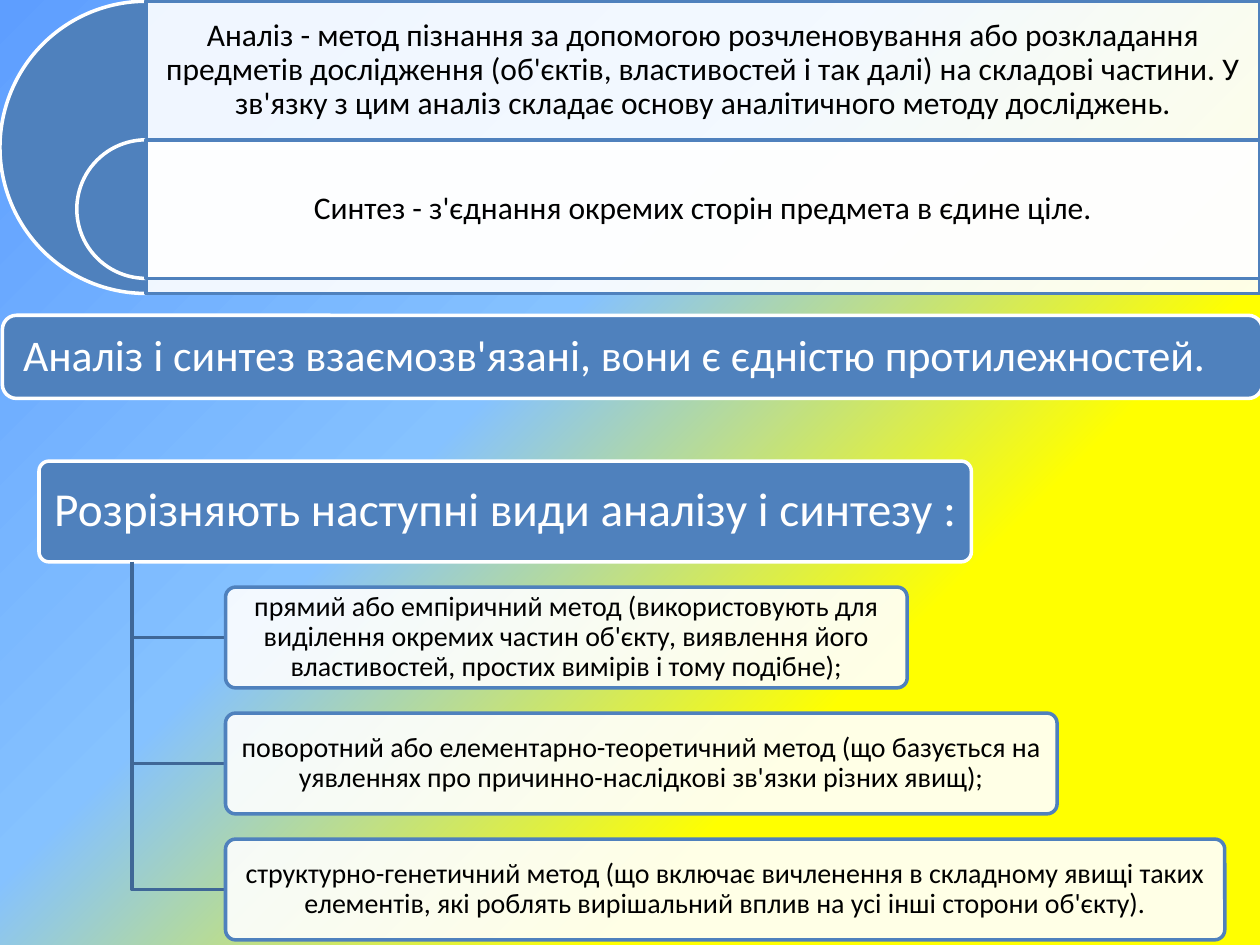
import pptx
import pptx.util
import pptx.dml.color
import pptx.enum.shapes
import pptx.enum.text
import pptx.oxml
import pptx.oxml.ns

Pt = pptx.util.Pt
SHAPE = pptx.enum.shapes.MSO_SHAPE
ALIGN = pptx.enum.text.PP_ALIGN
COLORS = {
    "blue": "4F81BD", "dark_blue": "3F6797", "white": "FFFFFF", "black": "000000",
    "sky": "5E9EFF", "light_sky": "85C2FF", "yellow": "FFFF00",
}


class SlideBuilder:
    """Holds the style and the current slide; all lengths are in points."""
    font = "Calibri"
    line_width = 2

    def __init__(self, slide):
        self.slide = slide

    def color(self, name):
        return pptx.dml.color.RGBColor.from_string(COLORS[name])

    def background(self, stops, angle):
        fill = self.slide.background.fill
        fill.gradient()
        fill.gradient_angle = 360 - angle
        stop_list = self.slide.element.find(".//" + pptx.oxml.ns.qn("a:gsLst"))
        for old_stop in list(stop_list):
            stop_list.remove(old_stop)
        for percent, name in stops:
            stop_list.append(pptx.oxml.parse_xml(
                f'<a:gs {pptx.oxml.ns.nsdecls("a")} pos="{percent * 1000}">'
                f'<a:srgbClr val="{COLORS[name]}"/></a:gs>'))

    def outline(self, shape, name):
        shape.shadow.inherit = False
        shape.line.color.rgb = self.color(name)
        shape.line.width = Pt(self.line_width)

    def shape(self, kind, box, fill, line, adjustments=(), opacity=100):
        shape = self.slide.shapes.add_shape(kind, *map(Pt, box))
        for index, value in enumerate(adjustments):
            shape.adjustments[index] = value
        shape.fill.solid()
        shape.fill.fore_color.rgb = self.color(fill)
        if opacity < 100:
            color = shape.element.spPr.find(".//" + pptx.oxml.ns.qn("a:srgbClr"))
            color.append(pptx.oxml.parse_xml(
                f'<a:alpha {pptx.oxml.ns.nsdecls("a")} val="{opacity * 1000}"/>'))
        self.outline(shape, line)
        return shape

    def half_disc(self, left, top, size):
        return self.shape(SHAPE.PIE, (left, top, size, size), "blue", "white", (54, 162))

    def blue_bar(self, box, corner):
        return self.shape(SHAPE.ROUNDED_RECTANGLE, box, "blue", "white", (corner,))

    def white_panel(self, kind, box, adjustments=()):
        return self.shape(kind, box, "white", "blue", adjustments, opacity=90)

    def text(self, shape, text, size, color, margins, align=ALIGN.CENTER):
        frame = shape.text_frame
        frame.word_wrap = True
        frame.auto_size = pptx.enum.text.MSO_AUTO_SIZE.NONE
        frame.vertical_anchor = pptx.enum.text.MSO_ANCHOR.MIDDLE
        (frame.margin_left, frame.margin_top,
         frame.margin_right, frame.margin_bottom) = map(Pt, margins)
        frame.text = text
        paragraph = frame.paragraphs[0]
        paragraph.alignment = align
        paragraph.line_spacing = 0.9
        paragraph.font.name = self.font
        paragraph.font.size = Pt(size)
        paragraph.font.color.rgb = self.color(color)

    def title(self, box, text, size, color, margins):
        title = self.slide.shapes.title
        title.left, title.top, title.width, title.height = map(Pt, box)
        self.text(title, text, size, color, margins)
        title.element.getparent().append(title.element)

    def elbow(self, x, y, end_x, end_y):
        builder = self.slide.shapes.build_freeform(Pt(x), Pt(y))
        builder.add_line_segments([(Pt(x), Pt(end_y)), (Pt(end_x), Pt(end_y))], close=False)
        elbow = builder.convert_to_shape()
        elbow.fill.background()
        self.outline(elbow, "dark_blue")


presentation = pptx.Presentation()
presentation.slide_width, presentation.slide_height = Pt(720), Pt(540)
page = SlideBuilder(presentation.slides.add_slide(presentation.slide_layouts[5]))
page.background([(0, "sky"), (40, "light_sky"), (70, "yellow"), (100, "yellow")], 45)

# Definitions: nested half discs with a panel beside each
center, top, inset = 83.5, 0.7, 5
definitions = [
    (167, "Аналіз - метод пізнання за допомогою розчленовування або розкладання предметів "
          "дослідження (об'єктів, властивостей і так далі) на складові частини. У зв'язку "
          "з цим аналіз складає основу аналітичного методу досліджень."),
    (79.2, "Синтез - з'єднання окремих сторін предмета в єдине ціле."),
]
row_height = definitions[-1][0]
for row, (size, definition) in enumerate(definitions):
    row_top = top + row * row_height
    page.half_disc(center - size / 2, row_top, size)
    panel = page.white_panel(SHAPE.RECTANGLE, (center, row_top, 720 - center, size))
    page.text(panel, definition, 18, "black",
              (inset, inset, inset, inset + size - row_height))

# Statement bar
statement = page.blue_bar((1.4, 180.2, 720, 47.5), 0.17)
page.text(statement, "Аналіз і синтез взаємозв'язані, вони є єдністю протилежностей.",
          25, "white", (9.5, 9.5, 9.5, 9.5), ALIGN.LEFT)

# Heading and the tree of methods
heading_left, heading_top, node_height, step = 22.3, 263.5, 57.6, 72
heading_box = (heading_left, heading_top, 532.8, node_height)
page.blue_bar(heading_box, 0.1)
page.title(heading_box, "Розрізняють наступні види аналізу і синтезу :", 27, "white",
           (6, 4.5, 6, 4.5))

trunk, node_left = 75.6, 128.9
methods = [
    (389.5, "прямий або емпіричний метод (використовують для виділення окремих частин "
            "об'єкту, виявлення його властивостей, простих вимірів і тому подібне);"),
    (475.2, "поворотний або елементарно-теоретичний метод (що базується на уявленнях "
            "про причинно-наслідкові зв'язки різних явищ);"),
    (571, "структурно-генетичний метод (що включає вичленення в складному явищі таких "
          "елементів, які роблять вирішальний вплив на усі інші сторони об'єкту)."),
]
for number, (width, method) in enumerate(methods, start=1):
    node_top = heading_top + number * step
    page.elbow(trunk, heading_top + node_height, node_left, node_top + node_height / 2)
    node = page.white_panel(SHAPE.ROUNDED_RECTANGLE,
                            (node_left, node_top, width, node_height), (0.1,))
    page.text(node, method, 16, "black", (4, 3, 4, 3))

presentation.save("out.pptx")
